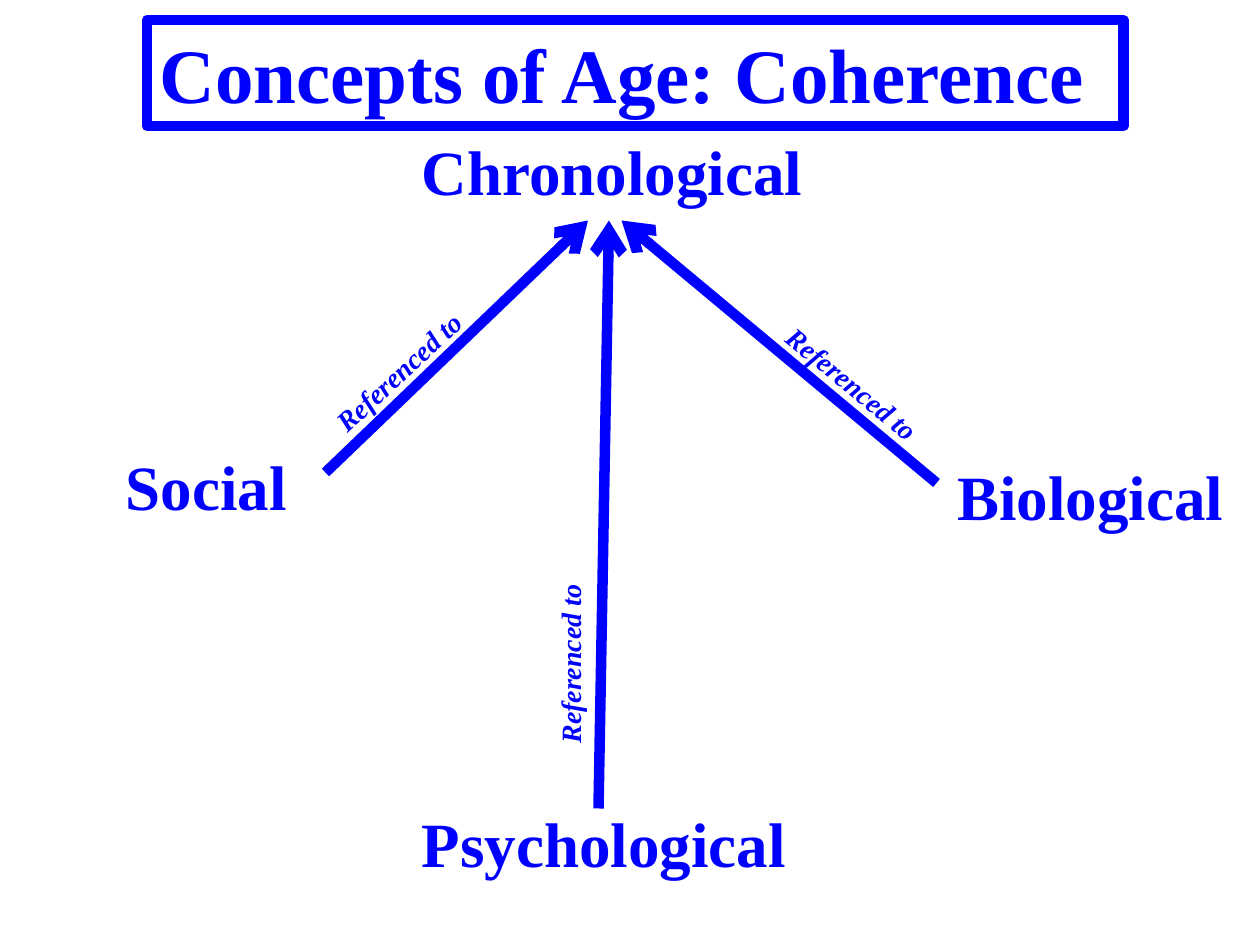
from lxml.etree import SubElement
from pptx import Presentation
from pptx.dml.color import RGBColor
from pptx.enum.shapes import MSO_CONNECTOR
from pptx.enum.text import MSO_ANCHOR, MSO_AUTO_SIZE, PP_ALIGN
from pptx.oxml.ns import qn
from pptx.util import Inches, Pt

BLUE = "0000FF"
FONT = "Times New Roman"
LINE_WIDTH = 6
CELLS_PER_INCH = 12  # the slide is a grid of 120 columns by 90 rows

CONCEPT_HEIGHT = 8.5
LABEL_SIZE = (21, 4.4)

# text, column, row, width
CONCEPTS = [
    ("Chronological", 39, 12, 39),
    ("Biological", 90, 43, 30),
    ("Psychological", 39, 76, 38),
    ("Social", 10.8, 42, 19.2),
]

# arrow start, arrow end, label corner, label rotation
REFERENCES = [
    ((89.2, 46), (59.2, 21), (72, 35.4), 39.3),
    ((57, 77), (58, 21), (43.8, 59.3), 270),
    ((31, 45), (56, 21), (28.7, 32), 317.1),
]


def cells(count):
    return Inches(count / CELLS_PER_INCH)


def color(hex_string):
    return RGBColor.from_string(hex_string)


def style_line(line):
    line.color.rgb = color(BLUE)
    line.width = Pt(LINE_WIDTH)


def write_text(box, text, size, italic=None):
    frame = box.text_frame
    frame.word_wrap = True
    frame.auto_size = MSO_AUTO_SIZE.NONE
    frame.vertical_anchor = MSO_ANCHOR.TOP
    para = frame.paragraphs[0]
    para.alignment = PP_ALIGN.LEFT
    para.line_spacing = 1.0
    para.space_before = Pt(0)
    span = para.add_run()
    span.text = text
    span.font.name = FONT
    span.font.size = Pt(size)
    span.font.bold = True
    span.font.italic = italic
    span.font.color.rgb = color(BLUE)


def add_title(page, text):
    title = page.shapes.title
    title.left, title.top = cells(14), cells(1.9)
    title.width, title.height = cells(93), cells(10.1)
    style_line(title.line)
    write_text(title, text, 44)


def add_text(shapes, text, corner, extent, size, italic=None):
    box = shapes.add_textbox(*map(cells, (*corner, *extent)))
    write_text(box, text, size, italic)
    return box


def add_arrow(shapes, start, end):
    arrow = shapes.add_connector(MSO_CONNECTOR.STRAIGHT, *map(cells, (*start, *end)))
    style_line(arrow.line)
    SubElement(arrow.line._get_or_add_ln(), qn("a:tailEnd"), type="arrow")
    SubElement(arrow._element.spPr, qn("a:effectLst"))


def add_reference(page, start, end, corner, rotation):
    """Group an arrow with the label that runs along it."""
    group = page.shapes.add_group_shape()
    add_arrow(group.shapes, start, end)
    label = add_text(group.shapes, "Referenced to", corner, LABEL_SIZE, 16, italic=True)
    label.rotation = rotation


def main():
    deck = Presentation()
    deck.slide_width, deck.slide_height = cells(120), cells(90)
    page = deck.slides.add_slide(deck.slide_layouts[5])
    add_title(page, "Concepts of Age: Coherence")
    for text, column, row, width in CONCEPTS:
        add_text(page.shapes, text, (column, row), (width, CONCEPT_HEIGHT), 36)
    for reference in REFERENCES:
        add_reference(page, *reference)
    deck.save("out.pptx")


if __name__ == "__main__":
    main()
